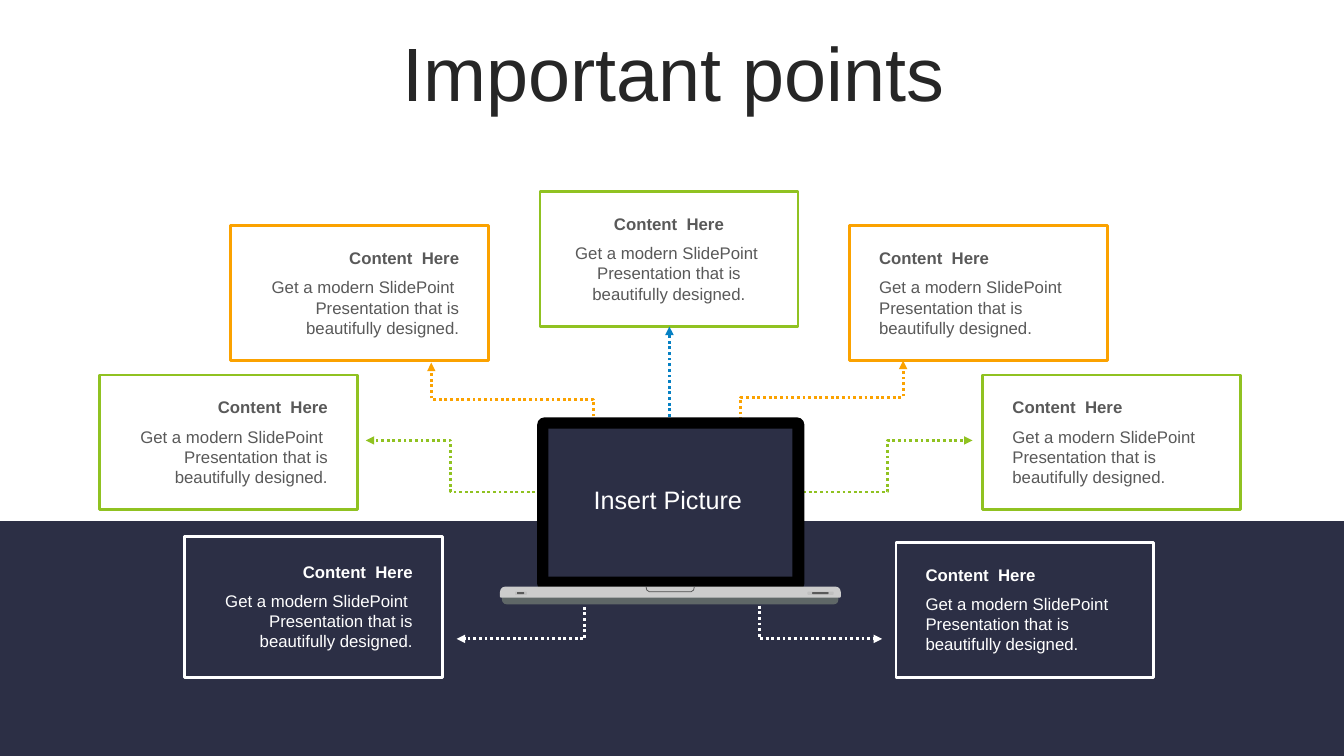
"""Build the "Important points" slide: a laptop linked to seven content cards."""
from dataclasses import dataclass

from lxml.etree import SubElement
from pptx import Presentation
from pptx.dml.color import RGBColor
from pptx.enum.dml import MSO_LINE
from pptx.enum.shapes import MSO_CONNECTOR, MSO_SHAPE as Preset
from pptx.enum.text import MSO_ANCHOR, MSO_AUTO_SIZE, PP_ALIGN as Align
from pptx.oxml.ns import qn
from pptx.shapes.autoshape import Shape
from pptx.shapes.shapetree import GroupShapes, SlideShapes
from pptx.util import Cm, Pt

WHITE = RGBColor(0xFF, 0xFF, 0xFF)
BLACK = RGBColor(0x00, 0x00, 0x00)
NAVY = RGBColor(0x2C, 0x2F, 0x45)
GREEN = RGBColor(0x90, 0xC2, 0x21)
ORANGE = RGBColor(0xFB, 0xA2, 0x00)
BLUE = RGBColor(0x06, 0x80, 0xC3)
INK = RGBColor(0x26, 0x26, 0x26)
GREY = RGBColor(0x59, 0x59, 0x59)
NOTCH_GREY = RGBColor(0x4D, 0x4D, 0x4D)
SLOT_GREY = RGBColor(0xBF, 0xBF, 0xBF)
BASE_GREY = RGBColor(0xCC, 0xCC, 0xCC)
UNDERSIDE_GREY = RGBColor(0x5F, 0x67, 0x67)

FONT = "Arial"
HEADING = "Content  Here"
BODY = "Get a modern SlidePoint  Presentation that is beautifully designed."
CARD_WIDTH = 6.5
TEXT_WIDTH, TEXT_HEIGHT, HEADING_HEIGHT = 5.51, 2.54, 0.74

Shapes = SlideShapes | GroupShapes


@dataclass(frozen=True)
class Card:
    left: float
    top: float
    edge: RGBColor
    align: Align
    ink: RGBColor = GREY
    fill: RGBColor | None = WHITE
    height: float = 3.4


@dataclass(frozen=True)
class Arrow:
    start: tuple[float, float]
    end: tuple[float, float]
    color: RGBColor
    bend: float | None = None
    upright: bool = False


@dataclass(frozen=True)
class Part:
    preset: Preset
    left: float
    top: float
    width: float
    height: float
    fill: RGBColor | None
    rounding: tuple[float, ...] = ()


BAND = Part(Preset.RECTANGLE, 0, 13.13, 33.87, 5.92, NAVY)

CARDS = (
    Card(2.51, 9.45, GREEN, Align.RIGHT),
    Card(5.82, 5.69, ORANGE, Align.RIGHT),
    Card(13.61, 4.83, GREEN, Align.CENTER),
    Card(21.41, 5.69, ORANGE, Align.LEFT),
    Card(24.77, 9.45, GREEN, Align.LEFT),
    Card(4.65, 13.51, WHITE, Align.RIGHT, WHITE, None, 3.56),
    Card(22.58, 13.67, WHITE, Align.LEFT, WHITE, None),
)

ARROWS = (
    Arrow((14.96, 11.63), (10.87, 9.14), ORANGE, 0.63, upright=True),
    Arrow((18.67, 11.58), (22.76, 9.09), ORANGE, 0.63, upright=True),
    Arrow((16.87, 11.07), (16.87, 8.23), BLUE),
    Arrow((13.49, 12.4), (9.22, 11.1), GREEN, 0.5),
    Arrow((20.24, 12.4), (24.51, 11.1), GREEN, 0.5),
    Arrow((14.71, 15.04), (11.51, 16.1), WHITE, -0.01),
    Arrow((19.2, 15.04), (22.23, 16.1), WHITE, -0.02),
)

LAPTOP = (
    Part(Preset.ROUND_2_SAME_RECTANGLE, 12.65, 14.99, 8.48, 0.24, UNDERSIDE_GREY, (0, 0.5)),
    Part(Preset.ROUNDED_RECTANGLE, 13.54, 10.52, 6.73, 4.37, BLACK, (0.04,)),
    Part(Preset.RECTANGLE, 13.82, 10.8, 6.15, 3.73, NAVY),
    Part(Preset.ROUND_2_SAME_RECTANGLE, 12.6, 14.78, 8.59, 0.28, BASE_GREY, (0.5, 0.1)),
    Part(Preset.ROUNDED_RECTANGLE, 12.98, 14.91, 0.3, 0.08, SLOT_GREY, (0.28,)),
    Part(Preset.ROUNDED_RECTANGLE, 13.03, 14.92, 0.18, 0.05, GREY, (0.28,)),
    Part(Preset.ROUNDED_RECTANGLE, 20.35, 14.91, 0.66, 0.08, SLOT_GREY, (0.28,)),
    Part(Preset.ROUNDED_RECTANGLE, 20.47, 14.92, 0.41, 0.05, GREY, (0.28,)),
)
NOTCH = ((16.28, 14.78), (16.3, 14.87), (16.36, 14.91),
         (17.42, 14.91), (17.48, 14.87), (17.5, 14.78))


def add_part(shapes: Shapes, part: Part) -> Shape:
    """Draw a borderless preset shape."""
    shape = shapes.add_shape(part.preset, Cm(part.left), Cm(part.top),
                             Cm(part.width), Cm(part.height))
    shape.shadow.inherit = False
    shape.line.fill.background()
    if part.fill is None:
        shape.fill.background()
    else:
        shape.fill.solid()
        shape.fill.fore_color.rgb = part.fill
    for index, value in enumerate(part.rounding):
        shape.adjustments[index] = value
    return shape


def add_text(shapes: Shapes, text: str, left: float, top: float, width: float, height: float,
             size: int, color: RGBColor, align: Align, bold: bool = False) -> Shape:
    """Draw a wrapping text box with one run."""
    box = shapes.add_textbox(Cm(left), Cm(top), Cm(width), Cm(height))
    box.text_frame.word_wrap = True
    box.text_frame.auto_size = MSO_AUTO_SIZE.SHAPE_TO_FIT_TEXT
    para = box.text_frame.paragraphs[0]
    para.alignment = align
    span = para.add_run()
    span.text = text
    span.font.name = FONT
    span.font.size = Pt(size)
    span.font.bold = bold
    span.font.color.rgb = color
    return box


def add_card(shapes: Shapes, card: Card) -> None:
    """Draw a framed card with its heading and body centred in height."""
    frame = add_part(shapes, Part(Preset.RECTANGLE, card.left, card.top,
                                  CARD_WIDTH, card.height, card.fill))
    frame.line.color.rgb = card.edge
    frame.line.width = Pt(2)
    left = card.left + (CARD_WIDTH - TEXT_WIDTH) / 2
    top = card.top + (card.height - TEXT_HEIGHT) / 2
    texts = shapes.add_group_shape().shapes
    add_text(texts, BODY, left, top + HEADING_HEIGHT, TEXT_WIDTH,
             TEXT_HEIGHT - HEADING_HEIGHT, 12, card.ink, card.align)
    add_text(texts, HEADING, left, top, TEXT_WIDTH, HEADING_HEIGHT,
             12, card.ink, card.align, bold=True)


def add_arrow(shapes: Shapes, arrow: Arrow) -> None:
    """Draw a dotted arrow; an upright one is laid flat and turned by 90 degrees."""
    (x1, y1), (x2, y2) = arrow.start, arrow.end
    if arrow.upright:
        mid_x, mid_y = (x1 + x2) / 2, (y1 + y2) / 2
        half_x, half_y = (y2 - y1) / 2, (x1 - x2) / 2
        x1, y1, x2, y2 = mid_x - half_x, mid_y - half_y, mid_x + half_x, mid_y + half_y
    kind = MSO_CONNECTOR.STRAIGHT if arrow.bend is None else MSO_CONNECTOR.ELBOW
    connector = shapes.add_connector(kind, Cm(x1), Cm(y1), Cm(x2), Cm(y2))
    connector.line.color.rgb = arrow.color
    connector.line.width = Pt(2)
    connector.line.dash_style = MSO_LINE.ROUND_DOT
    properties = connector.element.spPr
    SubElement(properties.find(qn("a:ln")), qn("a:tailEnd"), type="triangle")
    SubElement(properties, qn("a:effectLst"))
    if arrow.upright:
        properties.find(qn("a:xfrm")).set("rot", str(90 * 60000))
    if arrow.bend is not None:
        guides = properties.find(qn("a:prstGeom")).find(qn("a:avLst"))
        SubElement(guides, qn("a:gd"), name="adj1", fmla=f"val {round(arrow.bend * 100000)}")


def add_laptop(shapes: Shapes) -> None:
    """Draw the laptop with its notch and screen caption."""
    laptop = shapes.add_group_shape().shapes
    for part in LAPTOP:
        add_part(laptop, part)
    first, *rest = [(Cm(x), Cm(y)) for x, y in NOTCH]
    builder = laptop.build_freeform(*first)
    builder.add_line_segments(rest, close=False)
    notch = builder.convert_to_shape()
    notch.shadow.inherit = False
    notch.fill.background()
    notch.line.color.rgb = NOTCH_GREY
    notch.line.width = Pt(0.5)
    add_text(shapes, "Insert Picture", 14.71, 12.07, 4.55, 1.02, 18, WHITE, Align.LEFT)


def main() -> None:
    """Assemble and save the deck."""
    deck = Presentation()
    deck.slide_width, deck.slide_height = Cm(33.87), Cm(19.05)
    page = deck.slides.add_slide(deck.slide_layouts[6])
    title = add_text(page.shapes, "Important points", 0.89, 0.94, 32.16, 2.01,
                     54, INK, Align.CENTER).text_frame
    title.auto_size = MSO_AUTO_SIZE.NONE
    title.vertical_anchor = MSO_ANCHOR.MIDDLE
    title.paragraphs[0].line_spacing = 0.9
    title.paragraphs[0].space_before = Pt(10)
    add_part(page.shapes, BAND)
    for card in CARDS:
        add_card(page.shapes, card)
    for arrow in ARROWS:
        add_arrow(page.shapes, arrow)
    add_laptop(page.shapes)
    deck.save("out.pptx")


if __name__ == "__main__":
    main()
